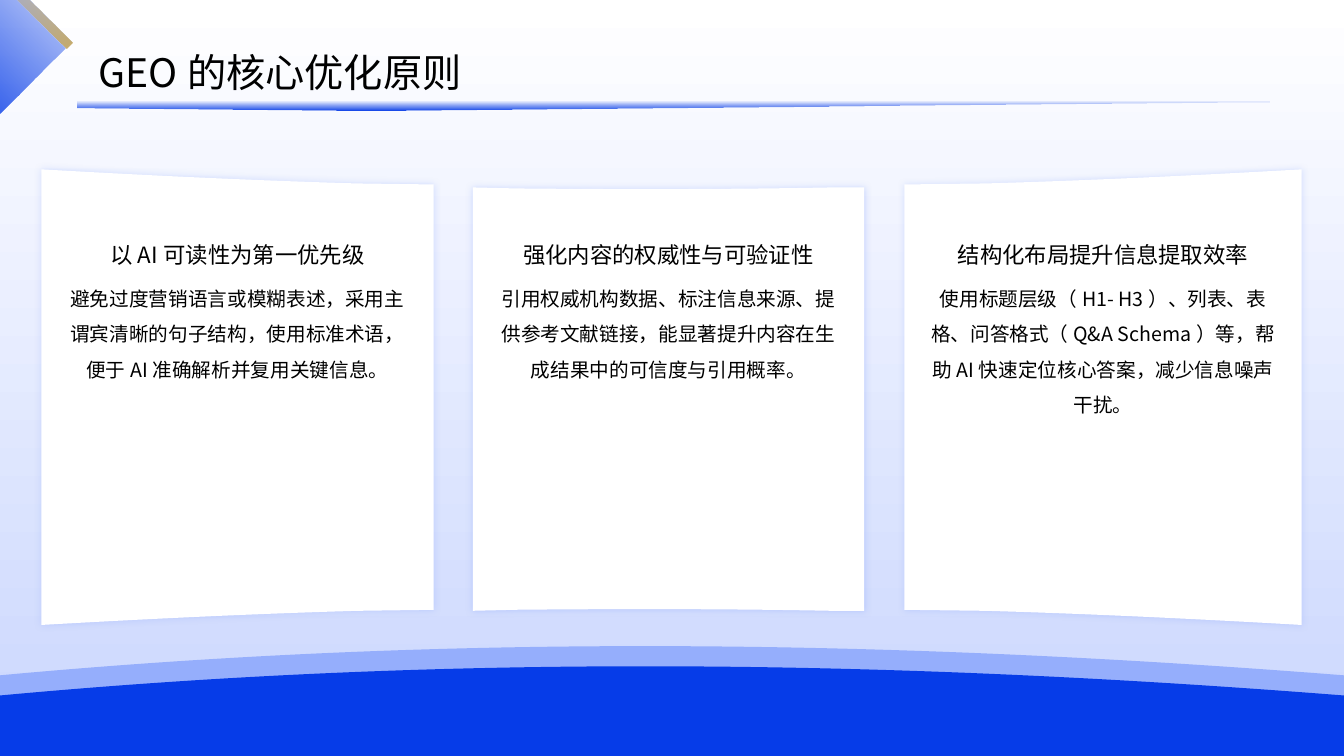
import pptx
import pptx.util
import pptx.dml.color
import pptx.enum.shapes
import pptx.enum.text
import pptx.oxml
import pptx.oxml.ns
from dataclasses import dataclass

Inches = pptx.util.Inches
Align = pptx.enum.text.PP_ALIGN
Anchor = pptx.enum.text.MSO_ANCHOR
qn = pptx.oxml.ns.qn


@dataclass(frozen=True)
class Theme:
    white: str = "FFFFFF"
    ink: str = "000000"
    blue: str = "063CE8"
    sky: str = "95AEFC"
    pale: str = "CAD6FE"
    gold: str = "C6AB6A"
    font: str = "Noto Sans CJK SC"
    title: int = 28
    head: int = 16
    body: int = 14


THEME = Theme()
WIDE, HIGH = 13.33, 7.5
NS = pptx.oxml.ns.nsdecls("a")
ROW = 3.94

SIDE = [(0, 0), (1.05, 0.06), (2.09, 0.11), (3.13, 0.14), 0.15]
MID = [(0, 0), (0.43, 0.01), (1.47, 0.02), (2.51, 0.02), (3.55, 0), 0]
CARDS = [
    ((0.41, 1.68, 3.89, 4.52), SIDE, False, "以AI可读性为第一优先级",
     "避免过度营销语言或模糊表述，采用主谓宾清晰的句子结构，使用标准术语，便于AI准确解析并复用关键信息。"),
    ((4.69, 1.86, 3.88, 4.2), MID, False, "强化内容的权威性与可验证性",
     "引用权威机构数据、标注信息来源、提供参考文献链接，能显著提升内容在生成结果中的可信度与引用概率。"),
    ((8.97, 1.68, 3.94, 4.52), SIDE, True, "结构化布局提升信息提取效率",
     "使用标题层级（H1- H3）、列表、表格、问答格式（Q&A Schema）等，帮助AI快速定位核心答案，减少信息噪声干扰。"),
]


def paint(shape, start, end=None, angle=0, alpha=100):
    shape.shadow.inherit = False
    shape.line.fill.background()
    if end is None:
        shape.fill.solid()
        shape.fill.fore_color.rgb = pptx.dml.color.RGBColor.from_string(start)
        return
    shape.fill.background()
    old = shape.element.spPr.find(qn("a:noFill"))
    grad = pptx.oxml.parse_xml(
        f'<a:gradFill {NS} rotWithShape="1"><a:gsLst>'
        f'<a:gs pos="0"><a:srgbClr val="{start}"/></a:gs>'
        f'<a:gs pos="100000"><a:srgbClr val="{end}">'
        f'<a:alpha val="{alpha * 1000}"/></a:srgbClr></a:gs>'
        f'</a:gsLst><a:lin ang="{angle * 60000}" scaled="0"/></a:gradFill>')
    old.getparent().replace(old, grad)


def trace(slide, left, top, pts, bends=()):
    pts = [(Inches(left + x), Inches(top + y)) for x, y in pts]
    pen = slide.shapes.build_freeform(*pts[0])
    pen.add_line_segments(pts[1:], close=True)
    shape = pen.convert_to_shape()
    lines = list(shape.element.iter(qn("a:lnTo")))
    for first in bends:
        bend = pptx.oxml.parse_xml(f"<a:cubicBezTo {NS}/>")
        lines[first - 1].addprevious(bend)
        for line in lines[first - 1:first + 2]:
            bend.append(line[0])
            line.getparent().remove(line)
    return shape


def block(slide, box):
    kind = pptx.enum.shapes.MSO_SHAPE.RECTANGLE
    return slide.shapes.add_shape(kind, *map(Inches, box))


def write(shape, text, size, space, align, anchor):
    frame = shape.text_frame
    look = dict(word_wrap=True, auto_size=pptx.enum.text.MSO_AUTO_SIZE.NONE,
                vertical_anchor=anchor, margin_left=0, margin_right=0,
                margin_top=0, margin_bottom=0)
    for name, value in look.items():
        setattr(frame, name, value)
    para = frame.paragraphs[0]
    for name, value in dict(line_spacing=space, alignment=align,
                            space_before=pptx.util.Pt(0)).items():
        setattr(para, name, value)
    run = para.add_run()
    run.text = text
    for name, value in dict(size=pptx.util.Pt(size), name=THEME.font, bold=False).items():
        setattr(run.font, name, value)
    run.font.color.rgb = pptx.dml.color.RGBColor.from_string(THEME.ink)
    latin = run.font._element.find(qn("a:latin"))
    latin.addnext(pptx.oxml.parse_xml(f'<a:ea {NS} typeface="{THEME.font}"/>'))


def card(slide, box, edge, flip, head, body):
    left, top, width, height = box
    rim = edge[:-1] + [(width, edge[-1])]
    pts = rim + [(x, height - y) for x, y in reversed(rim)]
    if flip:
        pts = [(width - x, y) for x, y in pts]
    first = len(rim) - 4
    panel = trace(slide, left, top, pts, (first, len(rim) + 2))
    paint(panel, THEME.white)
    glow = panel.element.spPr.find(qn("a:effectLst"))
    glow.append(pptx.oxml.parse_xml(
        f'<a:outerShdw {NS} blurRad="{pptx.util.Pt(5)}" dist="0" dir="0" algn="ctr" '
        f'rotWithShape="0"><a:srgbClr val="{THEME.sky}">'
        f'<a:alpha val="40000"/></a:srgbClr></a:outerShdw>'))
    span = 3.42
    side = left + (width - span) / 2
    for text, drop, tall, size, space, anchor in (
            (head, -2.02, 0.74, THEME.head, 1.2, Anchor.BOTTOM),
            (body, -1.21, 3.13, THEME.body, 1.5, Anchor.TOP)):
        area = slide.shapes.add_textbox(*map(Inches, (side, ROW + drop, span, tall)))
        write(area, text, size, space, Align.CENTER, anchor)


def wave(slide, box, color):
    left, top, width, height = box
    pts = [(0, 0), (4.64, -0.43), (9, -0.34), (width, 0), (width, height), (0, height)]
    paint(trace(slide, left, top, pts, (1,)), color)


def corner(slide, box):
    left, top, width, height = box
    gem = trace(slide, left, top, [(0, 0), (width, 0), (width, 1.05),
                                   (1.34, height), (0, 0.18)])
    paint(gem, THEME.blue, THEME.blue, 270, 0)
    strip = block(slide, (left + 1.05, top + 0.44, 1.18, 0.09))
    paint(strip, THEME.gold, THEME.gold, 180, 0)
    for shape in (gem, strip):
        shape.rotation = 45


def header(slide, box):
    left, top, width, height = box
    title = slide.shapes.title
    for name, value in zip(("left", "top", "width", "height"), box):
        setattr(title, name, Inches(value))
    write(title, "GEO的核心优化原则", THEME.title, 1.3, Align.LEFT, Anchor.MIDDLE)
    title.element.getparent().append(title.element)
    rule = trace(slide, left - 0.21, top + 0.69, [
        (0, 0), (0, 0.06), (3.08, 0.09), (11.82, 0.01), (11.82, 0)])
    paint(rule, THEME.blue, THEME.blue, 270, 0)


def main():
    deck = pptx.Presentation()
    deck.slide_width, deck.slide_height = Inches(WIDE), Inches(HIGH)
    slide = deck.slides.add_slide(deck.slide_layouts[5])
    paint(block(slide, (0, 0, WIDE, HIGH)), THEME.white, THEME.pale, 90)
    for item in CARDS:
        card(slide, *item)
    for top, color in ((6.7, THEME.sky), (6.9, THEME.blue)):
        wave(slide, (0, top, WIDE, 0.6), color)
    header(slide, (0.98, 0.32, 9.74, 0.65))
    corner(slide, (-1.37, -0.45, 1.81, 1.52))
    deck.save("out.pptx")


if __name__ == "__main__":
    main()
